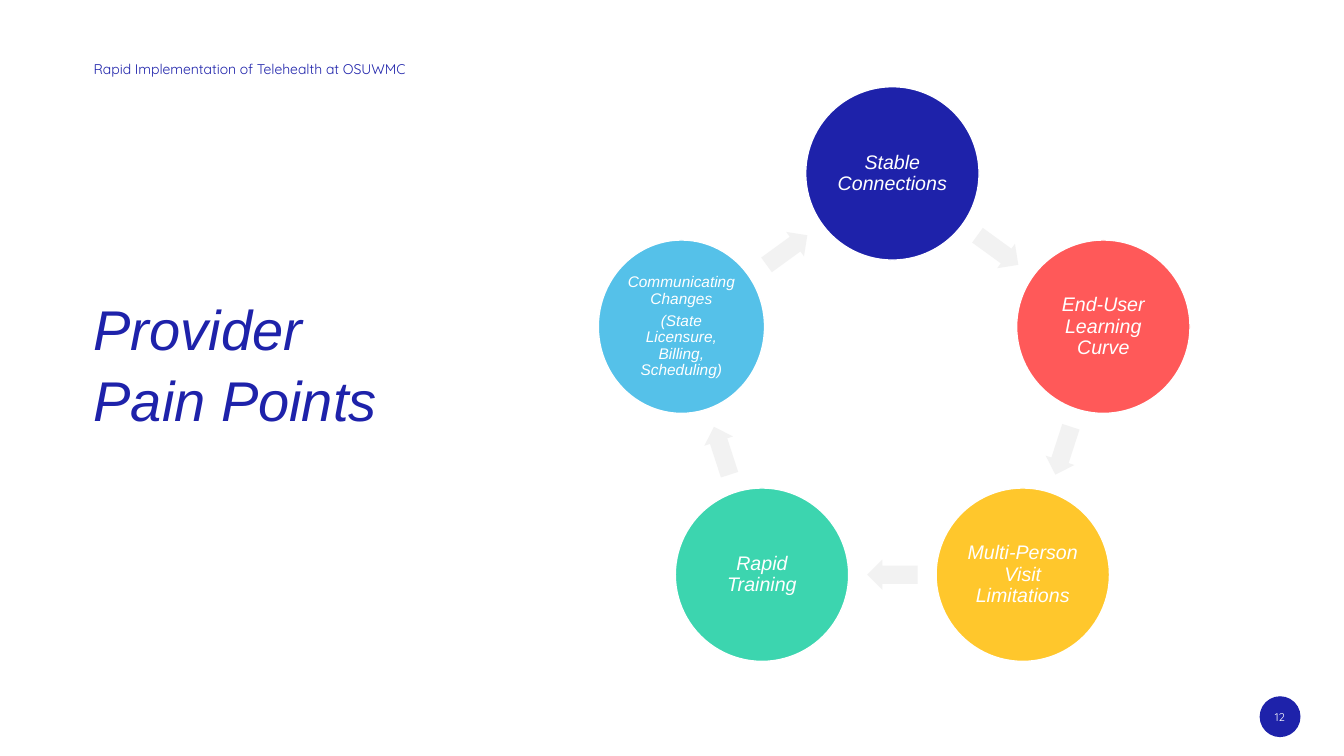
import math
from pptx import Presentation
from pptx.dml.color import RGBColor
from pptx.enum import shapes, text
from pptx.util import Cm, Pt

NAVY = RGBColor(0x1E, 0x22, 0xAA)
CORAL = RGBColor(0xFF, 0x59, 0x59)
AMBER = RGBColor(0xFF, 0xC7, 0x2C)
MINT = RGBColor(0x3C, 0xD5, 0xAF)
SKY = RGBColor(0x55, 0xC1, 0xE9)
GREY = RGBColor(0xF2, 0xF2, 0xF2)
WHITE = RGBColor(0xFF, 0xFF, 0xFF)

# Content
HEADER = "Rapid Implementation of Telehealth at OSUWMC"
TITLE = "Provider\vPain Points"
PAGE_NUMBER = "12"
# Paragraphs, fill, text size, circle width in cm; clockwise from the top
PAIN_POINTS = [
    (["Stable Connections"], NAVY, 14, 4.37),
    (["End-User Learning Curve"], CORAL, 14, 4.37),
    (["Multi-Person Visit Limitations"], AMBER, 14, 4.37),
    (["Rapid Training"], MINT, 14, 4.37),
    (["Communicating Changes", "(State Licensure, Billing, Scheduling)"], SKY, 11, 4.19),
]

# Cycle geometry in cm
CENTER_X, CENTER_Y, RADIUS = 22.49, 9.96, 5.59
CIRCLE_HEIGHT = 4.37
ARROW_WIDTH, ARROW_HEIGHT = 1.27, 0.76
STEP = 360 / len(PAIN_POINTS)


def ring_point(angle, radius):
    """Point at a clockwise angle in degrees from the top of the cycle."""
    turn = math.radians(angle)
    return CENTER_X + radius * math.sin(turn), CENTER_Y - radius * math.cos(turn)


def add_centered(slide, kind, x, y, width, height, fill):
    shape = slide.shapes.add_shape(
        kind, Cm(x - width / 2), Cm(y - height / 2), Cm(width), Cm(height))
    shape.shadow.inherit = False
    shape.fill.solid()
    shape.fill.fore_color.rgb = fill
    shape.line.fill.background()
    return shape


def write(shape, paragraphs, size, font, color, align, italic=False,
          spacing=1.0, after=0, inset=0, anchor=text.MSO_ANCHOR.MIDDLE):
    frame = shape.text_frame
    frame.text = "\n".join(paragraphs)
    frame.word_wrap = True
    frame.auto_size = text.MSO_AUTO_SIZE.NONE
    frame.vertical_anchor = anchor
    frame.margin_left = frame.margin_right = Cm(inset)
    frame.margin_top = frame.margin_bottom = Cm(inset)
    for para in frame.paragraphs:
        para.alignment = align
        para.line_spacing = spacing
        para.space_after = Pt(after)
        for span in para.runs:
            span.font.size = Pt(size)
            span.font.name = font
            span.font.italic = italic
            span.font.color.rgb = color


def main():
    deck = Presentation()
    deck.slide_width, deck.slide_height = Cm(33.87), Cm(19.05)
    page = deck.slides.add_slide(deck.slide_layouts[5])
    left, center = text.PP_ALIGN.LEFT, text.PP_ALIGN.CENTER
    oval = shapes.MSO_SHAPE.OVAL

    # Header and title
    header = page.shapes.add_textbox(Cm(2.36), Cm(1.63), Cm(15.29), Cm(0.71))
    write(header, [HEADER], 10, "Quicksand", NAVY, left, spacing=0.75,
          anchor=text.MSO_ANCHOR.TOP)
    title = page.shapes.title
    title.left, title.top, title.width, title.height = Cm(2.36), Cm(6.65), Cm(11.63), Cm(4.95)
    write(title, [TITLE], 40, "Arial", NAVY, left, italic=True, spacing=1.05)

    # Page number badge
    badge = add_centered(page, oval, 32.26, 18.06, 1.03, 1.03, NAVY)
    write(badge, [PAGE_NUMBER], 8, "Quicksand", WHITE, center)

    # Cycle: each circle is followed by an arrow towards the next one
    for index, (paragraphs, fill, size, width) in enumerate(PAIN_POINTS):
        angle = index * STEP
        circle = add_centered(page, oval, *ring_point(angle, RADIUS),
                              width, CIRCLE_HEIGHT, fill)
        circle.line.color.rgb = WHITE
        circle.line.width = Pt(1)
        write(circle, paragraphs, size, "Arial", WHITE, center, italic=True,
              spacing=0.9, after=size * 0.35, inset=0.05)

        middle = angle + STEP / 2
        chord_distance = RADIUS * math.cos(math.radians(STEP / 2))
        arrow = add_centered(page, shapes.MSO_SHAPE.RIGHT_ARROW,
                             *ring_point(middle, chord_distance),
                             ARROW_WIDTH, ARROW_HEIGHT, GREY)
        arrow.adjustments[0] = 0.6
        arrow.adjustments[1] = 0.5
        arrow.rotation = middle

    deck.save("out.pptx")


if __name__ == "__main__":
    main()
